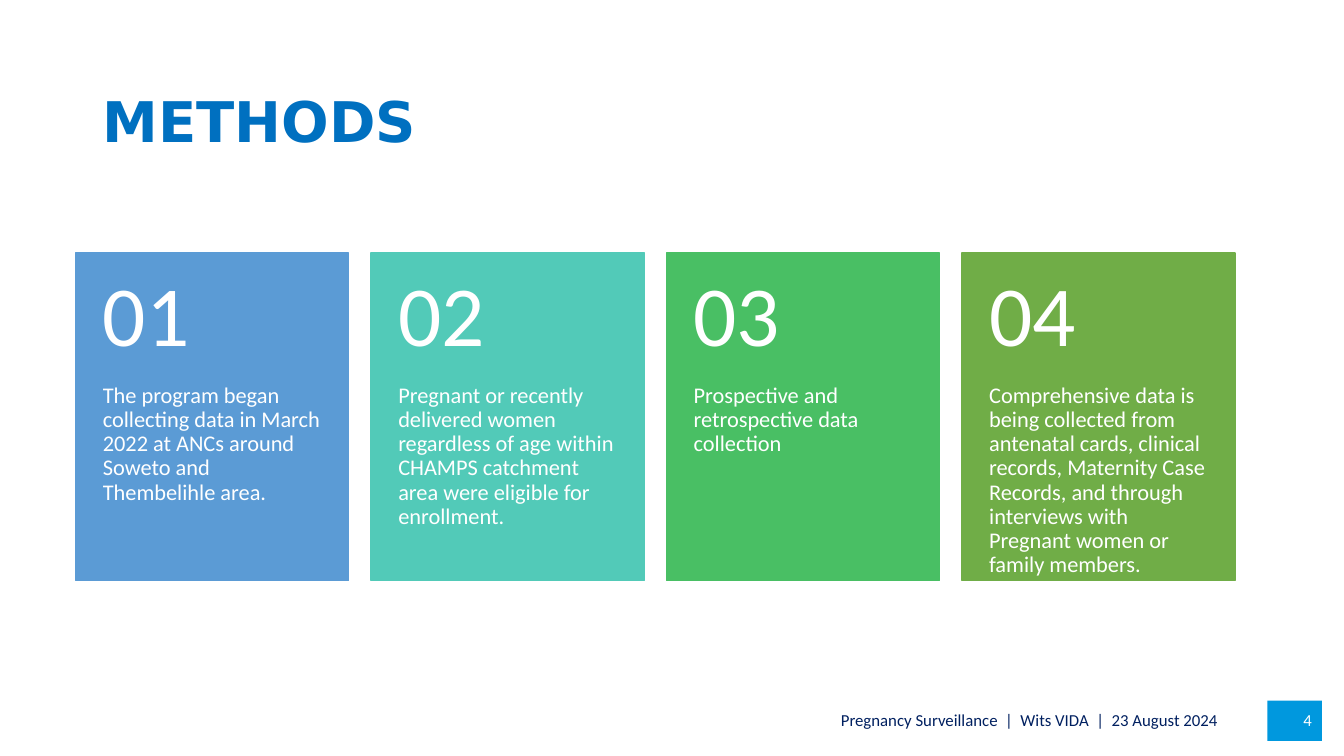
from pptx import Presentation
from pptx.dml.color import RGBColor
from pptx.enum.shapes import MSO_SHAPE
from pptx.enum.text import MSO_ANCHOR, PP_ALIGN
from pptx.util import Inches, Pt

RECTANGLE = MSO_SHAPE.RECTANGLE
TOP, MIDDLE = MSO_ANCHOR.TOP, MSO_ANCHOR.MIDDLE
LEFT, RIGHT = PP_ALIGN.LEFT, PP_ALIGN.RIGHT

WHITE = RGBColor(0xFF, 0xFF, 0xFF)
TITLE_BLUE = RGBColor(0x00, 0x70, 0xC0)
NAVY = RGBColor(0x00, 0x20, 0x60)
PAGE_BLUE = RGBColor(0x00, 0x98, 0xDE)
CARD_BLUE = RGBColor(0x5B, 0x9B, 0xD5)
CARD_TEAL = RGBColor(0x52, 0xCA, 0xB8)
CARD_GREEN = RGBColor(0x49, 0xBF, 0x64)
CARD_OLIVE = RGBColor(0x70, 0xAD, 0x47)

CARDS_LEFT, CARDS_TOP = 0.75, 2.51
CARD_WIDTH, CARD_HEIGHT, CARD_PITCH = 2.71, 3.25, 2.93
NUMBER_HEIGHT = CARD_HEIGHT * 0.4
FOOTER_TOP, FOOTER_HEIGHT = 6.95, 0.4

METHODS = [
    (CARD_BLUE, "The program began collecting data in March 2022 at ANCs "
                "around Soweto and Thembelihle area."),
    (CARD_TEAL, "Pregnant or recently delivered women regardless of age within "
                "CHAMPS catchment area were eligible for enrollment."),
    (CARD_GREEN, "Prospective and retrospective data collection"),
    (CARD_OLIVE, "Comprehensive data is being collected from antenatal cards, "
                 "clinical records, Maternity Case Records, and through "
                 "interviews with Pregnant women or family members."),
]

deck = Presentation()
deck.slide_width, deck.slide_height = Inches(13.33), Inches(7.5)
page = deck.slides.add_slide(deck.slide_layouts[6])


def add_block(left, top, width, height, color):
    block = page.shapes.add_shape(
        RECTANGLE, Inches(left), Inches(top), Inches(width), Inches(height))
    block.shadow.inherit = False
    block.fill.solid()
    block.fill.fore_color.rgb = color
    block.line.fill.background()
    return block


def write(box, text, size, color, font="Calibri", bold=False, align=LEFT,
          anchor=MIDDLE, insets=(0.1, 0.05, 0.1, 0.05)):
    frame = box.text_frame
    sides = ("margin_left", "margin_top", "margin_right", "margin_bottom")
    frame_format = dict(zip(sides, map(Inches, insets)))
    frame_format.update(word_wrap=True, vertical_anchor=anchor)
    for name, value in frame_format.items():
        setattr(frame, name, value)
    para = frame.paragraphs[0]
    para.alignment = align
    para.line_spacing = 0.9
    span = para.add_run()
    span.text = text
    for name, value in {"name": font, "size": Pt(size), "bold": bold}.items():
        setattr(span.font, name, value)
    span.font.color.rgb = color


title = page.shapes.add_textbox(
    Inches(0.92), Inches(0.61), Inches(11.5), Inches(1.24))
write(title, "METHODS", 40, TITLE_BLUE, font="DejaVu Sans", bold=True)

for column, (color, method) in enumerate(METHODS):
    left = CARDS_LEFT + column * CARD_PITCH
    card = add_block(left, CARDS_TOP, CARD_WIDTH, CARD_HEIGHT, color)
    card.line.color.rgb = color
    card.line.width = Pt(1)
    number = page.shapes.add_textbox(
        Inches(left), Inches(CARDS_TOP), Inches(CARD_WIDTH), Inches(NUMBER_HEIGHT))
    write(number, f"{column + 1:02}", 61, WHITE, insets=(0.27, 0.18, 0.27, 0.18))
    body = page.shapes.add_textbox(
        Inches(left), Inches(CARDS_TOP + NUMBER_HEIGHT),
        Inches(CARD_WIDTH), Inches(CARD_HEIGHT - NUMBER_HEIGHT))
    write(body, method, 16, WHITE, anchor=TOP, insets=(0.27, 0, 0.27, 0.36))

footer = page.shapes.add_textbox(
    Inches(8.05), Inches(FOOTER_TOP), Inches(4.3), Inches(FOOTER_HEIGHT))
write(footer, "Pregnancy Surveillance  |  Wits VIDA  |  23 August 2024", 12, NAVY,
      insets=(0.29, 0.05, 0.1, 0.05))

page_number = add_block(12.57, FOOTER_TOP, 0.54, FOOTER_HEIGHT, PAGE_BLUE)
write(page_number, "4", 12, WHITE, align=RIGHT)

deck.save("out.pptx")
